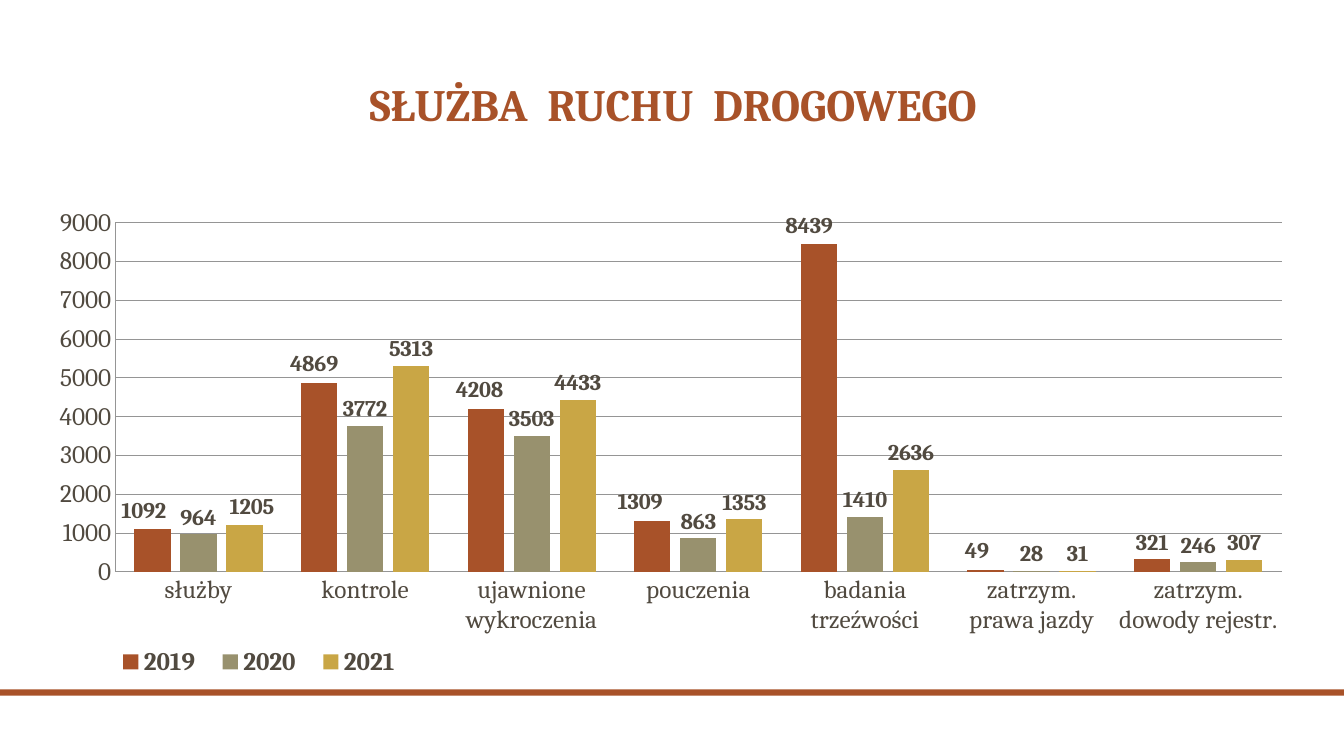
"""Builds a slide with a clustered column chart of road traffic police activity."""
import pptx
import pptx.chart.data
import pptx.dml.color
import pptx.enum.chart
import pptx.enum.shapes
import pptx.enum.text
import pptx.oxml
import pptx.oxml.ns
import pptx.util
from pptx.util import Cm

RUST = pptx.dml.color.RGBColor(0xA8, 0x52, 0x29)
OLIVE = pptx.dml.color.RGBColor(0x98, 0x91, 0x6E)
GOLD = pptx.dml.color.RGBColor(0xC9, 0xA6, 0x45)
BROWN = pptx.dml.color.RGBColor(0x51, 0x4A, 0x40)
GREY = pptx.dml.color.RGBColor(0x95, 0x95, 0x95)
FONT = "Cambria"

TITLE = "SŁUŻBA  RUCHU  DROGOWEGO"
CATEGORIES = ["służby", "kontrole", "ujawnione wykroczenia", "pouczenia",
              "badania trzeźwości", "zatrzym. prawa jazdy", "zatrzym. dowody rejestr."]
YEARS = [
    ("2019", RUST, [1092, 4869, 4208, 1309, 8439, 49, 321]),
    ("2020", OLIVE, [964, 3772, 3503, 863, 1410, 28, 246]),
    ("2021", GOLD, [1205, 5313, 4433, 1353, 2636, 31, 307]),
]
LABEL_SHIFTS = {
    "2019": {0: -0.007, 1: -0.004, 2: -0.005, 3: -0.01, 4: -0.008, 5: -0.007},
    "2021": {0: 0.006},
}
PLOT_AREA = {"layoutTarget": "inner", "xMode": "edge", "yMode": "edge",
             "x": 0.049, "y": 0.065, "w": 0.941, "h": 0.706}
LEGEND_AREA = {"xMode": "edge", "yMode": "edge", "x": 0.04, "y": 0.925, "w": 0.25, "h": 0.07}


def format_font(font, size, color=BROWN, bold=False):
    font.name, font.size, font.bold = FONT, pptx.util.Pt(size), bold
    font.color.rgb = color


def write_text(frame, text, size, color, bold, align):
    frame.word_wrap = True
    frame.vertical_anchor = pptx.enum.text.MSO_ANCHOR.MIDDLE
    para = frame.paragraphs[0]
    para.alignment, para.line_spacing = align, 0.9
    span = para.add_run()
    span.text = text
    format_font(span.font, size, color, bold)


def manual_layout(settings):
    parts = "".join(f'<c:{name} val="{value}"/>' for name, value in settings.items())
    return pptx.oxml.parse_xml(
        f'<c:layout {pptx.oxml.ns.nsdecls("c")}><c:manualLayout>{parts}</c:manualLayout></c:layout>')


def set_layout(parent, position, settings):
    for old in parent.findall(pptx.oxml.ns.qn("c:layout")):
        parent.remove(old)
    parent.insert(position, manual_layout(settings))


def add_activity_chart(page):
    data = pptx.chart.data.CategoryChartData()
    data.categories = CATEGORIES
    for year, _, values in YEARS:
        data.add_series(year, values)
    chart = page.shapes.add_chart(
        pptx.enum.chart.XL_CHART_TYPE.COLUMN_CLUSTERED,
        Cm(1.37), Cm(4.8), Cm(31.24), Cm(12.47), data).chart
    format_font(chart.font, 18)
    chart.has_title = False

    values_axis, names_axis = chart.value_axis, chart.category_axis
    values_axis.minimum_scale, values_axis.maximum_scale = 0, 9000
    values_axis.major_unit = 1000
    values_axis.major_gridlines.format.line.color.rgb = GREY
    for axis in (values_axis, names_axis):
        axis.major_tick_mark = pptx.enum.chart.XL_TICK_MARK.NONE
        axis.format.line.color.rgb = GREY

    plot = chart.plots[0]
    plot.gap_width, plot.overlap, plot.vary_by_categories = 106, -27, False
    outside = pptx.enum.chart.XL_LABEL_POSITION.OUTSIDE_END
    for series, (year, color, _) in zip(plot.series, YEARS):
        series.format.fill.solid()
        series.format.fill.fore_color.rgb = color
        labels = series.data_labels
        labels.show_value, labels.position = True, outside
        format_font(labels.font, 16, bold=True)
        for index in LABEL_SHIFTS.get(year, {}):
            label = series.points[index].data_label
            format_font(label.font, 16, bold=True)
            label.position = outside

    for area, (year, _, _) in zip(chart.element.xpath(".//c:ser"), YEARS):
        shifts = LABEL_SHIFTS.get(year, {})
        for label, shift in zip(area.xpath("./c:dLbls/c:dLbl"), shifts.values()):
            set_layout(label, 1, {"x": shift, "y": -0.004})

    chart.has_legend = True
    chart.legend.position = pptx.enum.chart.XL_LEGEND_POSITION.BOTTOM
    chart.legend.include_in_layout = False
    format_font(chart.legend.font, 18, bold=True)
    set_layout(chart.element.xpath(".//c:plotArea")[0], 0, PLOT_AREA)
    set_layout(chart.element.xpath(".//c:legend")[0], 1, LEGEND_AREA)


def main():
    deck = pptx.Presentation()
    deck.slide_width, deck.slide_height = Cm(33.87), Cm(19.05)
    page = deck.slides.add_slide(deck.slide_layouts[5])

    stripe = page.shapes.add_shape(
        pptx.enum.shapes.MSO_SHAPE.RECTANGLE, 0, Cm(17.37), deck.slide_width, Cm(0.16))
    stripe.shadow.inherit = False
    stripe.fill.solid()
    stripe.fill.fore_color.rgb = RUST
    stripe.line.fill.background()

    title = page.shapes.title
    title.left, title.top, title.width, title.height = Cm(4.27), Cm(1.3), Cm(25.4), Cm(2.79)
    write_text(title.text_frame, TITLE, size=32, color=RUST, bold=True,
               align=pptx.enum.text.PP_ALIGN.CENTER)
    add_activity_chart(page)
    deck.save("out.pptx")


if __name__ == "__main__":
    main()
